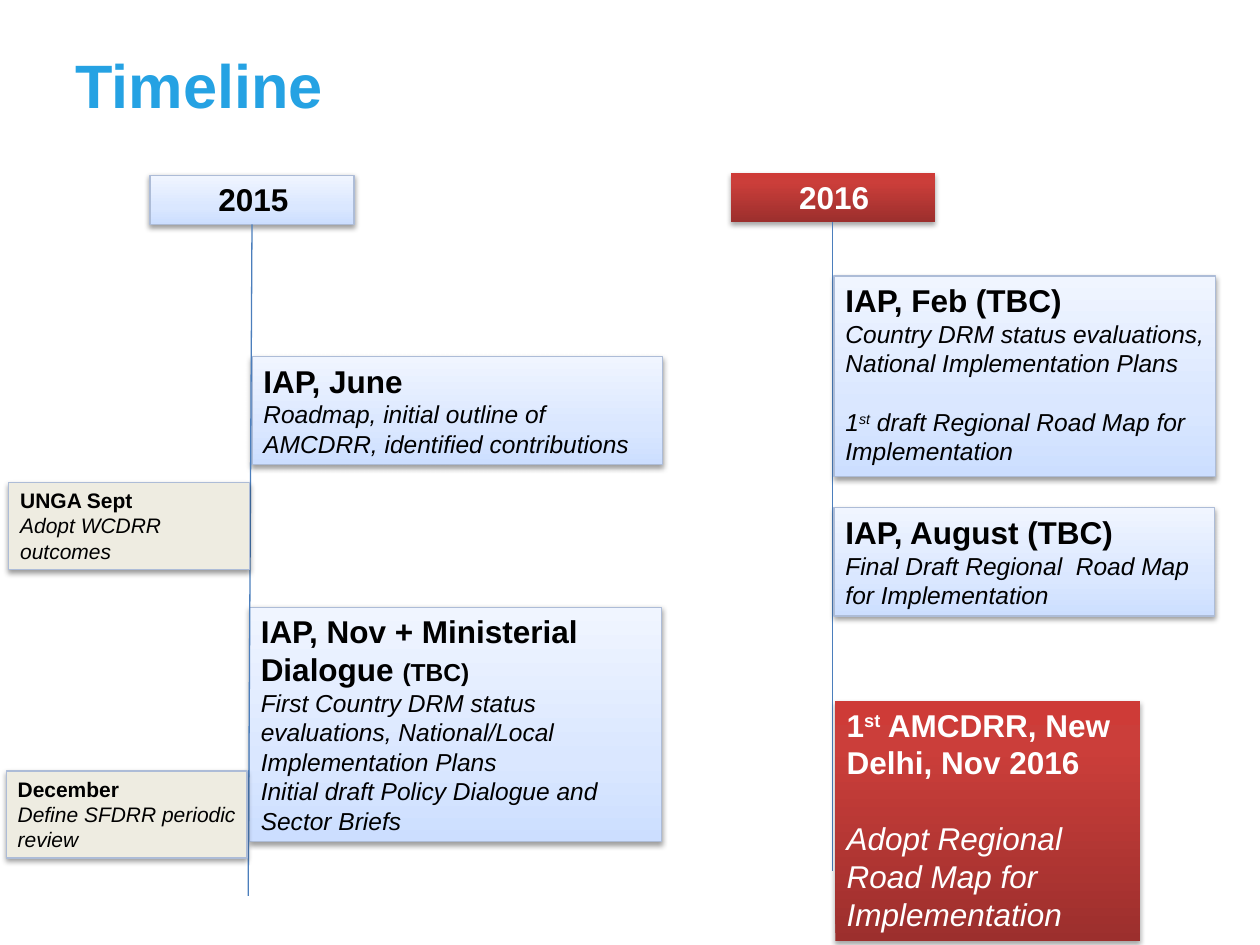
from dataclasses import dataclass
from typing import Optional

from lxml import etree
from pptx import Presentation
from pptx.dml.color import RGBColor
from pptx.enum import shapes, text
from pptx.oxml import ns
from pptx.util import Inches, Pt


@dataclass(frozen=True)
class Style:
    stops: tuple[tuple[int, str], ...]
    ink: str
    border: Optional[str]
    shadow_alpha: int
    shadow_distance: float


@dataclass(frozen=True)
class Theme:
    font: str = "Arial"
    title_color: str = "25A2E3"
    line_color: str = "4B7EBC"
    line_width: float = 0.75
    title: int = 35
    heading: int = 18
    body: int = 14
    small: int = 12
    blue: Style = Style(((0, "CCDEFF"), (35, "DAE7FF"), (100, "F0F5FF")),
                        "000000", "ADBCD7", 38, 1.6)
    red: Style = Style(((0, "9C2F2D"), (80, "CB3E3A"), (100, "CE3B37")),
                       "FFFFFF", None, 35, 1.8)
    beige: Style = Style(((0, "EEECE1"),), "000000", "ADBCD7", 38, 1.6)


THEME = Theme()


@dataclass(frozen=True)
class Run:
    text: str
    size: Optional[int] = None
    raised: bool = False


@dataclass(frozen=True)
class Para:
    runs: tuple[Run, ...]
    size: int = THEME.body
    heading: bool = False
    before: float = 0


@dataclass(frozen=True)
class Card:
    left: float
    top: float
    width: float
    height: float
    paras: tuple[Para, ...]
    style: Style = THEME.blue
    centered: bool = False


def head(*runs: Run, size: int = THEME.heading) -> Para:
    return Para(runs, size, heading=True)


def note(*runs: Run, size: int = THEME.body, before: float = 0) -> Para:
    return Para(runs, size, before=before)


def year(left: float, top: float, label: str, style: Style) -> Card:
    return Card(left, top, 1.62, 0.39, (head(Run(label)),), style, True)


def side_event(left: float, top: float, name: str, detail: str) -> Card:
    return Card(left, top, 1.91, 0.69,
                (head(Run(name), size=THEME.small),
                 note(Run(detail), size=THEME.small)), THEME.beige)


YEARS = (
    year(1.19, 1.39, "2015", THEME.blue),
    year(5.8, 1.37, "2016", THEME.red),
)
LINE_ENDS = ((1.97, 7.11), (6.61, 6.91))

CARDS_2015 = (
    Card(2, 2.83, 3.26, 0.86, (
        head(Run("IAP, June")),
        note(Run("Roadmap, initial outline of AMCDRR, identified contributions")))),
    Card(1.98, 4.82, 3.27, 1.86, (
        head(Run("IAP, Nov + Ministerial Dialogue "), Run("(TBC)", THEME.body)),
        note(Run("First Country DRM status evaluations, National/Local Implementation Plans")),
        note(Run("Initial draft Policy Dialogue and Sector Briefs")))),
)
CARDS_2016 = (
    Card(6.62, 2.19, 3.03, 1.59, (
        head(Run("IAP, Feb (TBC)")),
        note(Run("Country DRM status evaluations, National Implementation Plans")),
        note(Run("1"), Run("st", raised=True),
             Run(" draft Regional Road Map for  Implementation"), before=16.8))),
    Card(6.62, 4.03, 3.02, 0.86, (
        head(Run("IAP, August (TBC)")),
        note(Run("Final Draft Regional  Road Map for Implementation")))),
    Card(6.63, 5.56, 2.42, 1.91, (
        head(Run("1"), Run("st", raised=True), Run(" AMCDRR, New Delhi, Nov 2016")),
        note(Run("Adopt Regional Road Map for Implementation"),
             size=THEME.heading, before=21.6)), THEME.red),
)
SIDE_EVENTS = (
    side_event(0.05, 6.12, "December", "Define SFDRR periodic review"),
    side_event(0.07, 3.83, "UNGA Sept", "Adopt WCDRR outcomes"),
)


def add_text(p, content: str, *, size: int, color: str, bold: bool = False,
             italic: bool = False, raised: bool = False) -> None:
    r = p.add_run()
    r.text = content
    r.font.name = THEME.font
    r.font.size = Pt(size)
    r.font.bold = bold
    r.font.italic = italic
    r.font.color.rgb = RGBColor.from_string(color)
    if raised:
        r.font._element.set("baseline", "30000")


def add_color(parent, value: str):
    color = etree.SubElement(parent, ns.qn("a:srgbClr"))
    color.set("val", value)
    return color


def fill_shape(sp, style: Style) -> None:
    if len(style.stops) == 1:
        sp.fill.solid()
        sp.fill.fore_color.rgb = RGBColor.from_string(style.stops[0][1])
        return
    sp.fill.gradient()
    sp.fill.gradient_angle = 90
    stops = sp._element.spPr.find(".//" + ns.qn("a:gsLst"))
    for stop in list(stops):
        stops.remove(stop)
    for position, value in style.stops:
        stop = etree.SubElement(stops, ns.qn("a:gs"))
        stop.set("pos", str(position * 1000))
        add_color(stop, value)


def add_shadow(sp, style: Style) -> None:
    sp.shadow.inherit = False
    effects = sp._element.spPr.find(ns.qn("a:effectLst"))
    shadow = etree.SubElement(effects, ns.qn("a:outerShdw"))
    for name, value in (("blurRad", Pt(3.1)), ("dist", Pt(style.shadow_distance)),
                        ("dir", 90 * 60000), ("rotWithShape", 0)):
        shadow.set(name, str(int(value)))
    alpha = etree.SubElement(add_color(shadow, "000000"), ns.qn("a:alpha"))
    alpha.set("val", str(style.shadow_alpha * 1000))


def add_card(slide, card: Card):
    sp = slide.shapes.add_shape(
        shapes.MSO_SHAPE.RECTANGLE, Inches(card.left), Inches(card.top),
        Inches(card.width), Inches(card.height))
    fill_shape(sp, card.style)
    if card.style.border:
        sp.line.color.rgb = RGBColor.from_string(card.style.border)
        sp.line.width = Pt(THEME.line_width)
    else:
        sp.line.fill.background()
    add_shadow(sp, card.style)
    tf = sp.text_frame
    tf.word_wrap = True
    tf.auto_size = text.MSO_AUTO_SIZE.SHAPE_TO_FIT_TEXT
    tf.vertical_anchor = text.MSO_ANCHOR.TOP
    tf.margin_left, tf.margin_right = Inches(0.09), Inches(0.07)
    tf.margin_top = tf.margin_bottom = Inches(0.04)
    for i, para in enumerate(card.paras):
        p = tf.add_paragraph() if i else tf.paragraphs[0]
        p.alignment = text.PP_ALIGN.CENTER if card.centered else text.PP_ALIGN.LEFT
        if para.before:
            p.space_before = Pt(para.before)
        for run in para.runs:
            add_text(p, run.text, size=run.size or para.size, color=card.style.ink,
                     bold=para.heading, italic=not para.heading, raised=run.raised)
    return sp


def add_timeline(slide, header, end: tuple[float, float]) -> None:
    x, y = map(Inches, end)
    line = slide.shapes.add_connector(shapes.MSO_CONNECTOR.STRAIGHT, x, header.top, x, y)
    line.begin_connect(header, 2)
    line.line.color.rgb = RGBColor.from_string(THEME.line_color)
    line.line.width = Pt(THEME.line_width)
    etree.SubElement(line._element.spPr, ns.qn("a:effectLst"))


def add_title(slide, content: str) -> None:
    title = slide.shapes.title
    title.left, title.top = Inches(0.5), Inches(0.3)
    title.width, title.height = Inches(9), Inches(0.74)
    title.text_frame.vertical_anchor = text.MSO_ANCHOR.MIDDLE
    p = title.text_frame.paragraphs[0]
    p.alignment = text.PP_ALIGN.LEFT
    add_text(p, content, size=THEME.title, color=THEME.title_color, bold=True)


def main() -> None:
    prs = Presentation()
    prs.slide_width, prs.slide_height = Inches(10), Inches(7.5)
    slide = prs.slides.add_slide(prs.slide_layouts[5])
    add_title(slide, "Timeline")
    headers = [add_card(slide, card) for card in YEARS]
    for card in CARDS_2015:
        add_card(slide, card)
    for header, end in zip(headers, LINE_ENDS):
        add_timeline(slide, header, end)
    for card in CARDS_2016 + SIDE_EVENTS:
        add_card(slide, card)
    prs.save("out.pptx")


if __name__ == "__main__":
    main()
